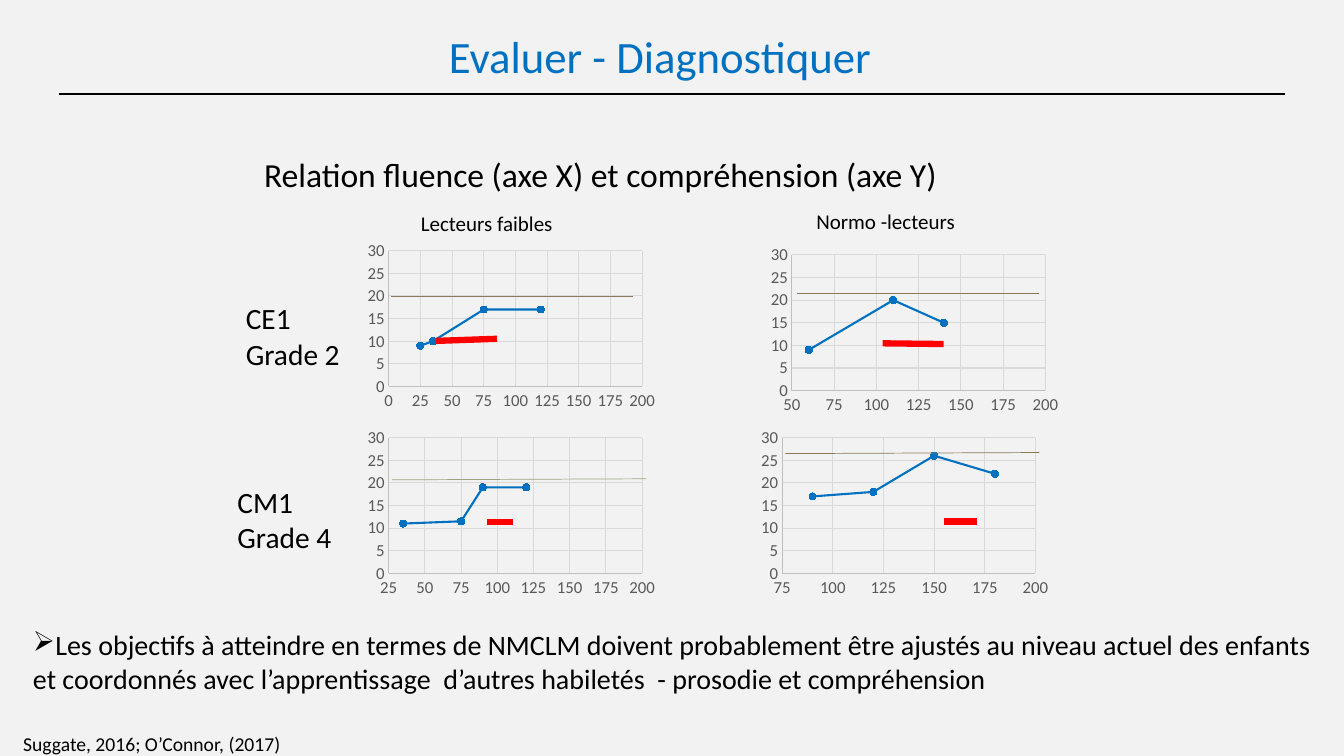
from lxml import etree
from pptx import Presentation
from pptx.chart.data import XyChartData
from pptx.dml.color import RGBColor
from pptx.enum import chart as ch, shapes, text
from pptx.oxml import parse_xml
from pptx.oxml.ns import nsdecls, qn
from pptx.util import Pt

# Content: lengths in points
FONT = "Calibri"
HUES = {"back": "F2F2F2", "ink": "000000", "blue": "0070C0", "grid": "D9D9D9",
        "axis": "BFBFBF", "label": "595959", "tan": "87795D",
        "sage": "9CA383", "red": "FF0000"}

# left, top, lowest x, points
CHARTS = [
    (258.5, 169, 0, [(25, 9), (35, 10), (75, 17), (120, 17)]),
    (546.5, 172, 50, [(60, 9), (110, 20), (140, 15)]),
    (258.5, 302.5, 25, [(35, 11), (75, 11.5), (90, 19), (120, 19)]),
    (539.5, 302.5, 75, [(90, 17), (120, 18), (150, 26), (180, 22)]),
]
WIDE, HIGH = 213, 126
PLOT = {"x": 0.09, "y": 0.08, "w": 0.85, "h": 0.77}

# left, top, width, height, size, lines, options
TEXTS = [
    (145.5, 109.5, 723.5, 75.5, 24,
     ["Relation fluence (axe X) et compréhension (axe Y)"],
     {"margin": 36, "lead": 0.9, "before": 5}),
    (9.5, 519, 243.5, 24.5, 14, ["Suggate, 2016; O’Connor, (2017)"], {}),
    (16.5, 445, 927.5, 55.5, 20,
     ["Les objectifs à atteindre en termes de NMCLM doivent probablement "
      "être ajustés au niveau actuel des enfants et coordonnés avec "
      "l’apprentissage  d’autres habiletés  - prosodie et compréhension"],
     {"bullet": "➢"}),
    (168.5, 211, 81.5, 55.5, 21, ["CE1", "Grade 2"], {"wrap": False}),
    (162.5, 342, 81.5, 55.5, 21, ["CM1", "Grade 4"], {"wrap": False}),
    (293.5, 146.5, 183.5, 24.5, 15, ["Lecteurs faibles"], {}),
    (576, 145.5, 183.5, 24.5, 15, ["Normo -lecteurs"], {}),
    (66, 21.5, 811, 61, 32, ["Evaluer - Diagnostiquer"],
     {"hue": "blue", "align": text.PP_ALIGN.CENTER, "lead": 0.9, "before": 10}),
]

# x1, y1, x2, y2, colour, width
RULE = (42.5, 67, 918, 67, "ink", 1.5)
LEVELS = [
    (279.5, 211.5, 452, 211.5, "tan", 0.5),
    (280, 342.75, 461.5, 342, "sage", 0.5),
    (561, 324, 742.5, 323.25, "tan", 0.5),
    (569.5, 209.5, 742.5, 209.5, "tan", 0.5),
]
SPANS = [
    (311.5, 243.5, 355, 242, "red", 4.5),
    (630.5, 245.25, 674, 245.75, "red", 4.5),
    (348, 373, 366.5, 373, "red", 4.5),
    (674, 372.5, 698, 372.5, "red", 4.5),
]


def rgb(hue):
    return RGBColor.from_string(HUES[hue])


def ink(line, hue, width):
    line.color.rgb = rgb(hue)
    line.width = Pt(width)


def style(font, size, hue):
    font.name, font.size, font.color.rgb = FONT, Pt(size), rgb(hue)


def add_line(x1, y1, x2, y2, hue, width):
    line = slide.shapes.add_connector(
        shapes.MSO_CONNECTOR.STRAIGHT, Pt(x1), Pt(y1), Pt(x2), Pt(y2))
    ink(line.line, hue, width)
    etree.SubElement(line._element.spPr, qn("a:effectLst"))


def add_text(left, top, width, height, size, lines, opts):
    box = slide.shapes.add_textbox(Pt(left), Pt(top), Pt(width), Pt(height))
    frame = box.text_frame
    frame.word_wrap = opts.get("wrap", True)
    frame.text = "\n".join(lines)
    for para in frame.paragraphs:
        style(para.font, size, opts.get("hue", "ink"))
        para.alignment = opts.get("align", text.PP_ALIGN.LEFT)
        if "lead" in opts:
            para.line_spacing = opts["lead"]
            para.space_before = Pt(opts["before"])
        props = para._p.get_or_add_pPr()
        if "margin" in opts:
            props.set("marL", str(Pt(opts["margin"])))
        if "bullet" in opts:
            mark = parse_xml(f'<a:buChar {nsdecls("a")} char="{opts["bullet"]}"/>')
            props.insert_element_before(mark, "a:tabLst", "a:defRPr", "a:extLst")


def set_axis(axis, low, high, step):
    axis.minimum_scale, axis.maximum_scale, axis.major_unit = low, high, step
    axis.major_tick_mark = axis.minor_tick_mark = ch.XL_TICK_MARK.NONE
    axis.has_major_gridlines = True
    ink(axis.major_gridlines.format.line, "grid", 0.75)
    ink(axis.format.line, "axis", 0.75)
    style(axis.tick_labels.font, 12, "label")


def add_chart(left, top, low, points):
    data = XyChartData()
    series = data.add_series("Series 1")
    for x, y in points:
        series.add_data_point(x, y)
    chart = slide.shapes.add_chart(
        ch.XL_CHART_TYPE.XY_SCATTER_SMOOTH,
        Pt(left), Pt(top), Pt(WIDE), Pt(HIGH), data).chart
    chart.has_legend = chart.has_title = False
    style(chart.font, 10, "ink")
    set_axis(chart.category_axis, low, 200, 25)
    set_axis(chart.value_axis, 0, 30, 5)
    chart.plots[0].vary_by_categories = False

    # Curve and round markers
    curve = chart.plots[0].series[0]
    curve.smooth = True
    ink(curve.format.line, "blue", 1.5)
    curve.marker.style, curve.marker.size = ch.XL_MARKER_STYLE.CIRCLE, 5
    curve.marker.format.fill.solid()
    curve.marker.format.fill.fore_color.rgb = rgb("blue")
    ink(curve.marker.format.line, "blue", 0.75)

    # Same inner plot frame in every chart
    area = chart._chartSpace.find(".//" + qn("c:plotArea"))
    for old in area.findall(qn("c:layout")):
        area.remove(old)
    sizes = "".join(f'<c:{key} val="{val}"/>' for key, val in PLOT.items())
    area.insert(0, parse_xml(
        f'<c:layout {nsdecls("c")}><c:manualLayout><c:layoutTarget val="inner"/>'
        f'<c:xMode val="edge"/><c:yMode val="edge"/>{sizes}'
        '</c:manualLayout></c:layout>'))


# Slide
deck = Presentation()
deck.slide_width, deck.slide_height = Pt(960), Pt(540)
slide = deck.slides.add_slide(deck.slide_layouts[6])
slide.background.fill.solid()
slide.background.fill.fore_color.rgb = rgb("back")

# Title rule, charts, words, then lines over the charts
add_line(*RULE)
for item in CHARTS:
    add_chart(*item)
for item in TEXTS:
    add_text(*item)
for item in LEVELS + SPANS:
    add_line(*item)

deck.save("out.pptx")
